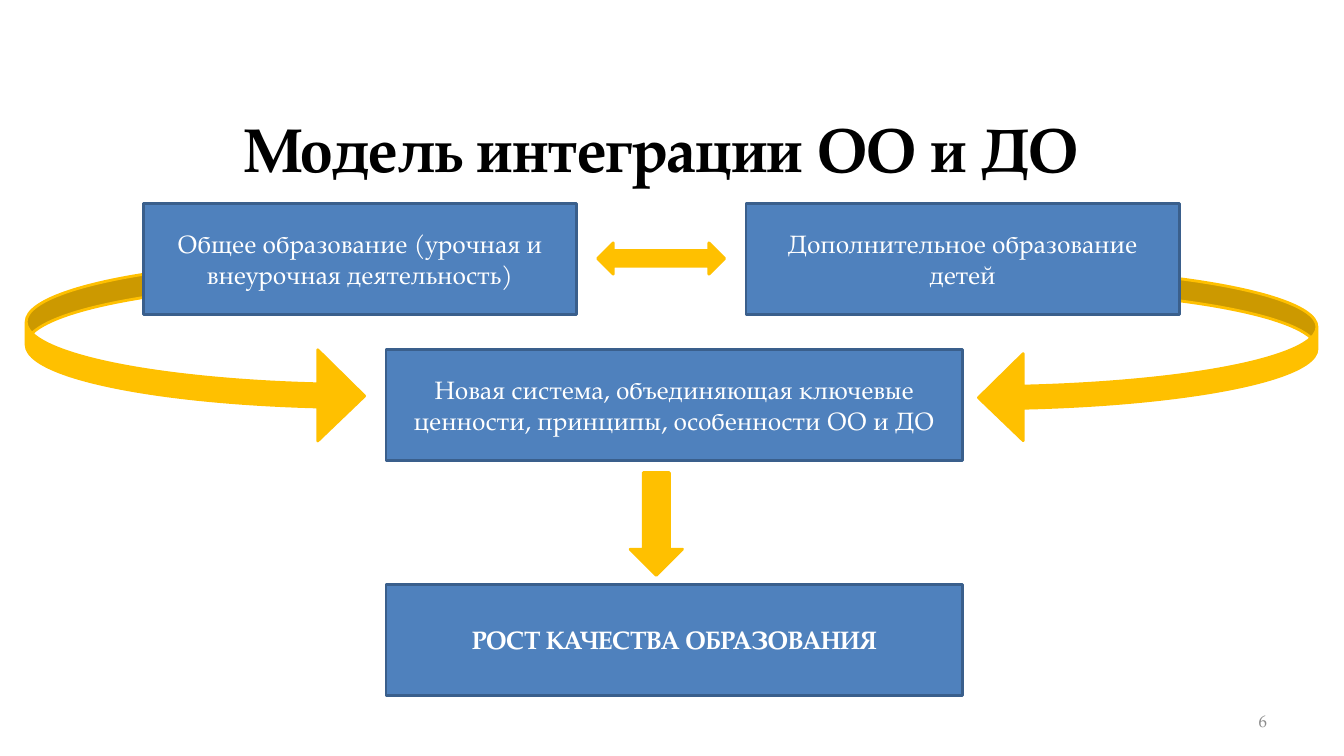
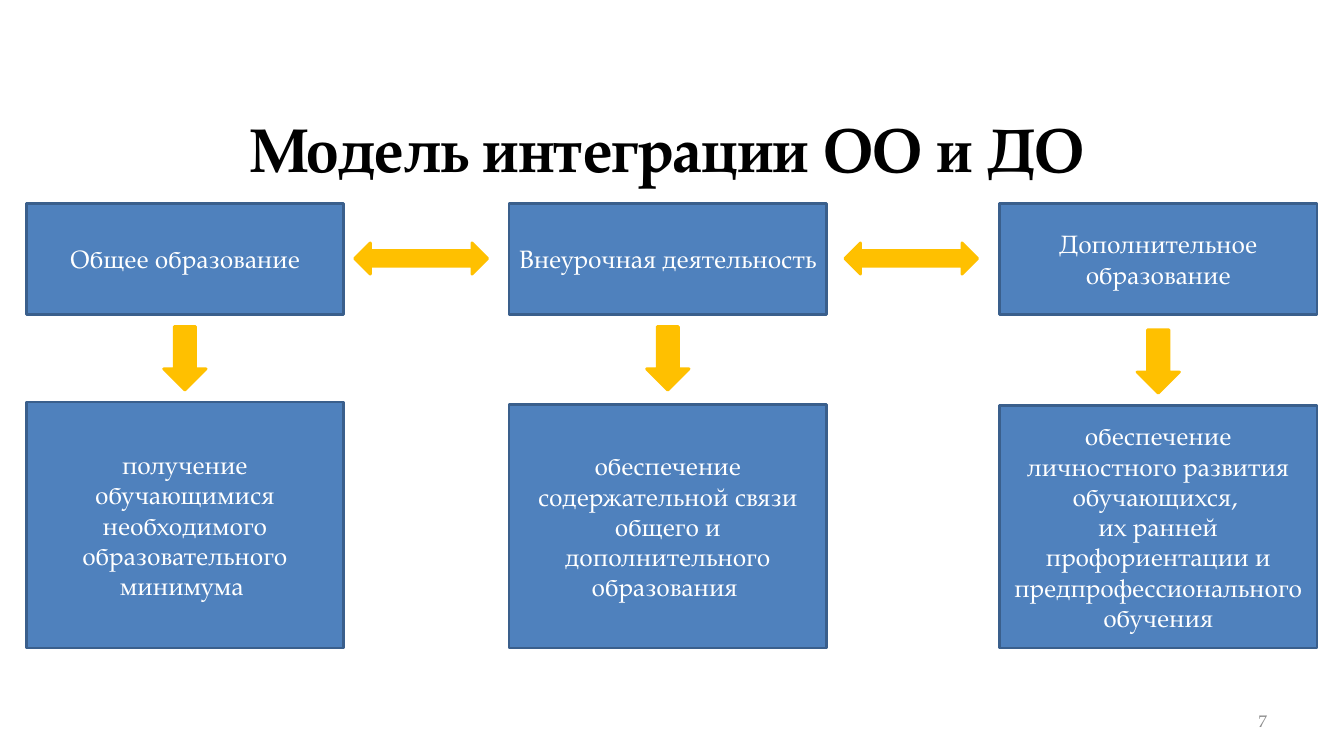
"""Builds two slides on the integration of general and extra education."""
from dataclasses import dataclass

from pptx import Presentation
from pptx import util as u
from pptx.dml.color import RGBColor
from pptx.enum import shapes, text


@dataclass(frozen=True)
class Theme:
    """Colours, type sizes and shared measures."""
    font: str = "TeX Gyre Pagella"
    ink: str = "000000"
    paper: str = "FFFFFF"
    block: str = "4F81BD"
    block_edge: str = "3A5F8C"
    arrow: str = "FFC000"
    muted: str = "8C8C8C"
    title_size: int = 44
    body_size: int = 18
    number_size: int = 12
    edge_width: int = 2
    block_height: float = 2.79


@dataclass(frozen=True)
class Box:
    """A rectangle in centimetres."""
    left: float
    top: float
    width: float
    height: float

    def within(self, left, top, width, height):
        """Return a box placed relative to this one."""
        return Box(self.left + left, self.top + top, width, height)

    def lengths(self):
        """Return left, top, width and height as lengths."""
        return [u.Cm(value) for value in (self.left, self.top, self.width, self.height)]


THEME = Theme()
KIND = shapes.MSO_SHAPE
ALIGN = text.PP_ALIGN
PAGE = Box(0, 0, 33.87, 19.05)
DIAGRAM = PAGE.within(0.66, 5.13, 32.53, 11.77)
TITLE = "Модель интеграции ОО и ДО"


def write(frame, lines, size, color, align=ALIGN.CENTER, bold=False):
    """Fill a text frame with evenly styled paragraphs."""
    frame.word_wrap = True
    frame.vertical_anchor = text.MSO_ANCHOR.MIDDLE
    frame.text = "\n".join(lines)
    for para in frame.paragraphs:
        para.alignment = align
        para.font.name = THEME.font
        para.font.size = u.Pt(size)
        para.font.bold = bold
        para.font.color.rgb = RGBColor.from_string(color)


def add_figure(page, kind, box, fill, edge):
    """Add a flat preset shape."""
    figure = page.shapes.add_shape(kind, *box.lengths())
    figure.shadow.inherit = False
    figure.fill.solid()
    figure.fill.fore_color.rgb = RGBColor.from_string(fill)
    figure.line.color.rgb = RGBColor.from_string(edge)
    figure.line.width = u.Pt(THEME.edge_width)
    return figure


def add_block(page, box, *lines, bold=False):
    """Add a blue rectangle with centred text."""
    block = add_figure(page, KIND.RECTANGLE, box, THEME.block, THEME.block_edge)
    write(block.text_frame, lines, THEME.body_size, THEME.paper, bold=bold)


def add_arrow(page, kind, box):
    """Add a yellow block arrow."""
    return add_figure(page, kind, box, THEME.arrow, THEME.arrow)


def add_sweep(page, box, mirrored=False):
    """Add a curved arrow, mirrored on request."""
    sweep = add_arrow(page, KIND.CURVED_RIGHT_ARROW, box)
    for index, value in enumerate((0.127, 1.3, 0.257)):
        sweep.adjustments[index] = value
    if mirrored:
        sweep.element.spPr.get_or_add_xfrm().set("flipH", "1")


def add_page(deck, number, title_left):
    """Add a page with its title and number."""
    page = deck.slides.add_slide(deck.slide_layouts[5])
    title = page.shapes.title
    title.left, title.top, title.width, title.height = PAGE.within(
        title_left, 2.13, 30.48, 3.18).lengths()
    write(title.text_frame, [TITLE], THEME.title_size, THEME.ink, bold=True)
    label = page.shapes.add_textbox(*PAGE.within(24.28, 17.65, 7.9, 1.02).lengths())
    write(label.text_frame, [str(number)], THEME.number_size, THEME.muted, ALIGN.RIGHT)
    return page


def add_merger(page, area):
    """Draw two kinds of education joining into one system."""
    height = THEME.block_height
    add_sweep(page, area.within(0, 1.4, 8.53, 4.6))
    add_sweep(page, area.within(area.width - 8.53, 1.6, 8.53, 4.39), mirrored=True)
    add_block(page, area.within(2.95, 0, 10.92, height),
              "Общее образование (урочная и внеурочная деятельность)")
    add_block(page, area.within(18.14, 0, 10.92, height),
              "Дополнительное образование детей")
    add_arrow(page, KIND.LEFT_RIGHT_ARROW, area.within(14.4, 0.99, 3.2, 0.79))
    add_block(page, area.within(9.07, 3.68, 14.53, height),
              "Новая система, объединяющая ключевые ценности, принципы, особенности ОО и ДО")
    add_arrow(page, KIND.DOWN_ARROW, area.within(15.22, 6.78, 1.32, 2.59))
    add_block(page, area.within(9.07, 9.6, 14.53, height),
              "РОСТ КАЧЕСТВА ОБРАЗОВАНИЯ", bold=True)


def add_strand(page, area, heading, goal, arrow_top, goal_top):
    """Draw one kind of education above its goal."""
    add_block(page, area.within(0, 0, area.width, THEME.block_height), heading)
    add_block(page, area.within(0, goal_top, area.width, area.height - goal_top), *goal)
    add_arrow(page, KIND.DOWN_ARROW,
              area.within((area.width - 1.07) / 2, arrow_top, 1.07, 1.6))


def add_strands(page, area):
    """Draw three linked kinds of education."""
    strands = (
        (0, "Общее образование",
         ["получение обучающимися необходимого образовательного минимума "], 3.1, 5),
        (12.17, "Внеурочная деятельность",
         ["обеспечение содержательной связи общего и дополнительного образования "],
         3.1, 5.06),
        (24.53, "Дополнительное образование",
         ["обеспечение личностного развития обучающихся, ",
          "их ранней профориентации и предпрофессионального обучения"], 3.18, 5.08),
    )
    for left, *content in strands:
        add_strand(page, area.within(left, 0, 8, 11.2), *content)
    for left in (8.28, 20.63):
        add_arrow(page, KIND.LEFT_RIGHT_ARROW, area.within(left, 0.99, 3.35, 0.79))


def main():
    """Build and save the deck."""
    deck = Presentation()
    deck.slide_width, deck.slide_height = PAGE.lengths()[2:]
    add_merger(add_page(deck, 6, 1.42), DIAGRAM)
    add_strands(add_page(deck, 7, 1.57), DIAGRAM)
    deck.save("out.pptx")


if __name__ == "__main__":
    main()
